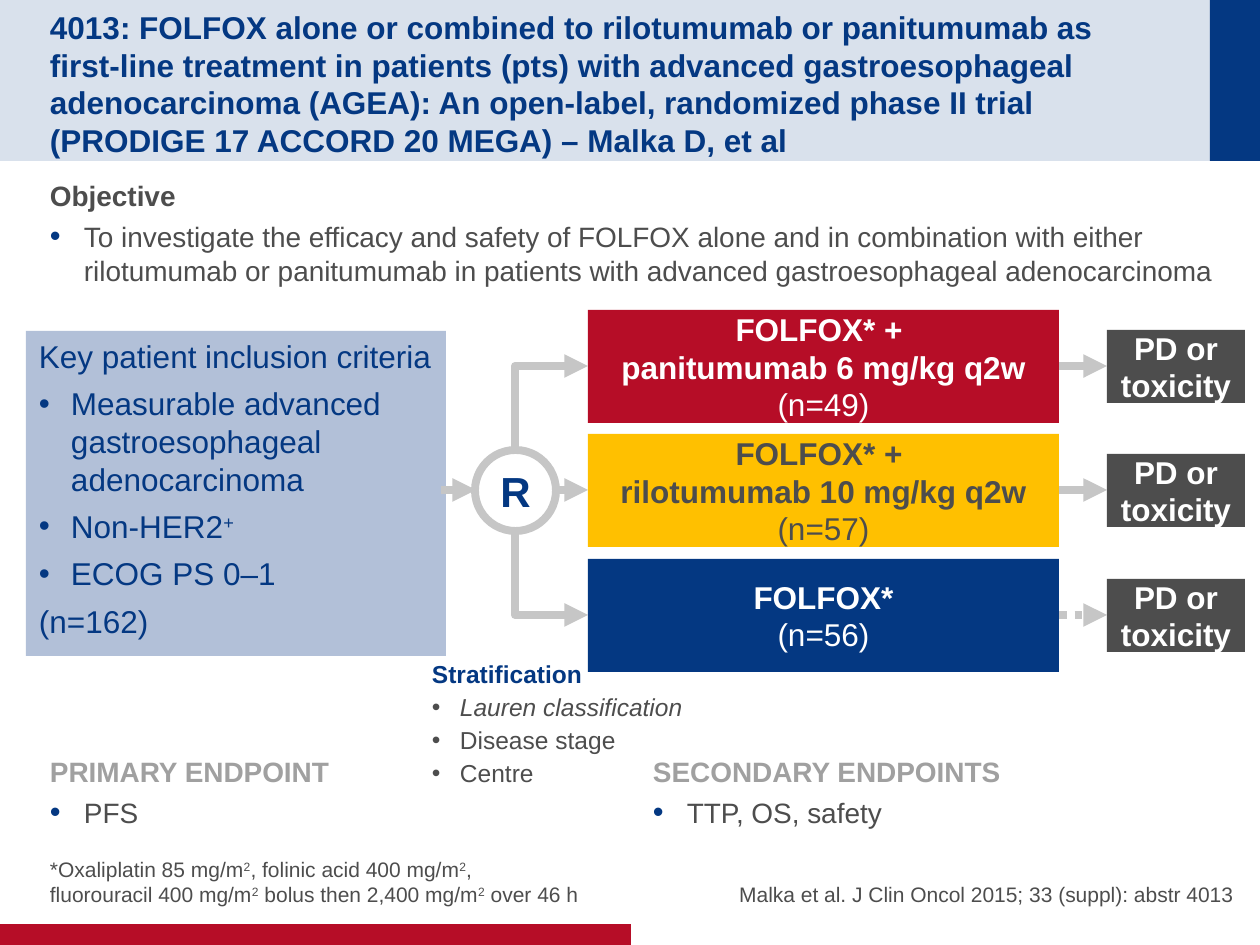
from copy import deepcopy

from lxml import etree
from pptx import Presentation
from pptx.dml.color import RGBColor
from pptx.enum.dml import MSO_LINE
from pptx.enum.shapes import MSO_CONNECTOR, MSO_SHAPE
from pptx.enum.text import MSO_ANCHOR, PP_ALIGN
from pptx.oxml.ns import qn
from pptx.util import Pt

PX = 914400 / 126
STRAIGHT, ELBOW = MSO_CONNECTOR.STRAIGHT, MSO_CONNECTOR.ELBOW
RECT, OVAL = MSO_SHAPE.RECTANGLE, MSO_SHAPE.OVAL
TOP, MIDDLE, BOTTOM = MSO_ANCHOR.TOP, MSO_ANCHOR.MIDDLE, MSO_ANCHOR.BOTTOM
LEFT, CENTER, RIGHT = PP_ALIGN.LEFT, PP_ALIGN.CENTER, PP_ALIGN.RIGHT

COLORS = {
    "navy": "043882", "red": "B60D27", "yellow": "FFC000", "pale": "D9E1EC",
    "panel": "B2C0D8", "dark": "4D4D4D", "heading": "A0A0A0",
    "arrow": "C6C6C6", "white": "FFFFFF",
}

# Text between carets is superscript.
TITLE = ("4013: FOLFOX alone or combined to rilotumumab or panitumumab as \n"
         "first-line treatment in patients (pts) with advanced gastroesophageal "
         "adenocarcinoma (AGEA): An open-label, randomized phase II trial "
         "(PRODIGE 17 ACCORD 20 MEGA) – Malka D, et al")
OBJECTIVE = ("To investigate the efficacy and safety of FOLFOX alone and in "
             "combination with either rilotumumab or panitumumab in patients "
             "with advanced gastroesophageal adenocarcinoma")
FOOTNOTE = ("*Oxaliplatin 85 mg/m^2^, folinic acid 400 mg/m^2^, \n"
            "fluorouracil 400 mg/m^2^ bolus then 2,400 mg/m^2^ over 46 h")
REFERENCE = "Malka et al. J Clin Oncol 2015; 33 (suppl): abstr 4013 "
CRITERIA_TITLE = "Key patient inclusion criteria"
CRITERIA = ["Measurable advanced gastroesophageal adenocarcinoma",
            "Non-HER2^+^", "ECOG PS 0–1"]
PATIENTS = "(n=162)"
STRATA = [("Lauren classification", True), ("Disease stage", False),
          ("Centre", False)]
# heading, heading colour, item, left, top, width, height, side inset
SECTIONS = [
    ("Objective", "dark", OBJECTIVE, 50, 173, 1172, 130, 0),
    ("PRIMARY ENDPOINT", "heading", "PFS", 50, 749, 570, 113, 0),
    ("SECONDARY ENDPOINTS", "heading", "TTP, OS, safety", 640, 749, 570, 113, 13),
]
# treatment, size, fill, text colour, centre line, dashed outcome arrow
ARMS = [
    ("FOLFOX* + \npanitumumab 6 mg/kg q2w", "(n=49)", "red", "white", 366, False),
    ("FOLFOX* + \nrilotumumab 10 mg/kg q2w", "(n=57)", "yellow", "dark", 490, False),
    ("FOLFOX*", "(n=56)", "navy", "white", 615, True),
]
OUTCOME = "PD or toxicity"
BANDS = [("pale", 0, 0, 1260, 161), ("navy", 1210, 0, 50, 161),
         ("red", 0, 924, 631, 21)]

ARM_LEFT, ARM_WIDTH, ARM_HEIGHT = 588, 471, 113
OUTCOME_LEFT, OUTCOME_WIDTH, OUTCOME_HEIGHT = 1107, 138, 73
CIRCLE_LEFT, CIRCLE_SIZE = 475, 81


def px(*values):
    return [round(value * PX) for value in values]


def rgb(name):
    return RGBColor.from_string(COLORS[name])


def line(text, size, color, bold=False, italic=False, after=0, indent=0,
         bullet_color=None, align=LEFT):
    """Describe one paragraph; a nonzero indent gives it a bullet."""
    return dict(text=text, size=size, color=color, bold=bold, italic=italic,
                after=after, indent=indent, bullet_color=bullet_color, align=align)


def add_bullet(para, indent, color):
    properties = para._p.get_or_add_pPr()
    width = str(px(indent)[0])
    properties.set("marL", width)
    properties.set("indent", "-" + width)
    if color:
        holder = etree.SubElement(properties, qn("a:buClr"))
        etree.SubElement(holder, qn("a:srgbClr"), val=COLORS[color])
        etree.SubElement(properties, qn("a:buSzPct"), val="110000")
    etree.SubElement(properties, qn("a:buFont"), typeface="Arial")
    etree.SubElement(properties, qn("a:buChar"), char="•")


def fill_paragraph(para, item):
    para.alignment = item["align"]
    para.space_after = Pt(item["after"])
    if item["indent"]:
        add_bullet(para, item["indent"], item["bullet_color"])
    for number, piece in enumerate(item["text"].split("^")):
        for row, words in enumerate(piece.split("\n")):
            if row:
                para.add_line_break()
            span = para.add_run()
            span.text = words
            font = span.font
            font.name, font.size = "Arial", Pt(item["size"])
            font.bold, font.italic = item["bold"], item["italic"]
            font.color.rgb = rgb(item["color"])
            if number % 2:
                font._element.set("baseline", "30000")
    for line_break in para._p.findall(qn("a:br")):
        line_break.insert(0, deepcopy(para.runs[0].font._element))


def set_text(box, items, anchor=TOP, insets=(13, 6, 13, 6), wrap=True):
    frame = box.text_frame
    frame.word_wrap = wrap
    frame.vertical_anchor = anchor
    (frame.margin_left, frame.margin_top,
     frame.margin_right, frame.margin_bottom) = px(*insets)
    for number, item in enumerate(items):
        para = frame.add_paragraph() if number else frame.paragraphs[0]
        fill_paragraph(para, item)


def add_text(page, place, items, **options):
    set_text(page.shapes.add_textbox(*px(*place)), items, **options)


def add_block(page, place, fill, kind=RECT):
    block = page.shapes.add_shape(kind, *px(*place))
    block.shadow.inherit = False
    block.line.fill.background()
    if fill:
        block.fill.solid()
        block.fill.fore_color.rgb = rgb(fill)
    else:
        block.fill.background()
    return block


def add_arrow(page, start, end, kind=STRAIGHT, arrow_end="a:tailEnd", dashed=False):
    arrow = page.shapes.add_connector(kind, *px(*start, *end))
    arrow.line.color.rgb = rgb("arrow")
    arrow.line.width = Pt(4.5)
    if dashed:
        arrow.line.dash_style = MSO_LINE.ROUND_DOT
        arrow.line._ln.find(qn("a:prstDash")).set("val", "sysDot")
    etree.SubElement(arrow.line._ln, qn(arrow_end), type="triangle")
    properties = arrow._element.spPr
    etree.SubElement(properties, qn("a:effectLst"))
    if kind == ELBOW:
        properties.find(qn("a:prstGeom")).set("prst", "bentConnector2")


def add_trial_design(page):
    middle = ARMS[1][4]
    circle_top = middle - CIRCLE_SIZE // 2
    circle_middle = CIRCLE_LEFT + CIRCLE_SIZE // 2

    panel = add_block(page, (26, 331, 420, 325), "panel")
    style = dict(size=18, color="navy", after=5.4)
    set_text(panel, [line(CRITERIA_TITLE, **style),
                     *[line(text, indent=32, **style) for text in CRITERIA],
                     line(PATIENTS, **style)])

    circle = add_block(page, (CIRCLE_LEFT, circle_top, CIRCLE_SIZE, CIRCLE_SIZE),
                       None, OVAL)
    circle.line.color.rgb = rgb("arrow")
    circle.line.width = Pt(4.5)
    set_text(circle, [line("R", 24, "navy", bold=True, align=CENTER)],
             anchor=MIDDLE, wrap=False)
    add_arrow(page, (441, middle), (CIRCLE_LEFT + 1, middle))
    add_arrow(page, (CIRCLE_LEFT + CIRCLE_SIZE, middle), (ARM_LEFT, middle))
    # Elbows run from the arm back to the circle, so the arrowhead is at the start.
    for center, edge in ((ARMS[0][4], circle_top),
                         (ARMS[2][4], circle_top + CIRCLE_SIZE)):
        add_arrow(page, (ARM_LEFT, center), (circle_middle, edge), ELBOW, "a:headEnd")

    for treatment, size, fill, color, center, dashed in ARMS:
        add_arrow(page, (1043, center), (OUTCOME_LEFT, center), dashed=dashed)
        arm = add_block(page, (ARM_LEFT, center - ARM_HEIGHT // 2,
                               ARM_WIDTH, ARM_HEIGHT), fill)
        set_text(arm, [line(treatment, 18, color, bold=True, align=CENTER),
                       line(size, 18, color, align=CENTER)],
                 anchor=MIDDLE, insets=(13, 0, 13, 0))
        outcome = add_block(page, (OUTCOME_LEFT, center - OUTCOME_HEIGHT // 2,
                                   OUTCOME_WIDTH, OUTCOME_HEIGHT), "dark")
        set_text(outcome, [line(OUTCOME, 18, "white", bold=True, align=CENTER)],
                 anchor=MIDDLE, insets=(13, 0, 13, 0))


def main():
    deck = Presentation()
    deck.slide_width, deck.slide_height = px(1260, 945)
    page = deck.slides.add_slide(deck.slide_layouts[6])

    for fill, *place in BANDS:
        add_block(page, place, fill)
    add_text(page, (50, 25, 1135, 111), [line(TITLE, 18, "navy", bold=True)],
             anchor=MIDDLE, insets=(0, 6, 0, 0))
    for heading, color, item, left, top, width, height, side in SECTIONS:
        add_text(page, (left, top, width, height),
                 [line(heading, 16, color, bold=True, after=4),
                  line(item, 16, "dark", after=4, indent=34, bullet_color="navy")],
                 insets=(side, 6, side, 6))
    add_trial_design(page)
    add_text(page, (419, 653, 388, 123),
             [line("Stratification", 14, "navy", bold=True, after=2),
              *[line(text, 14, "dark", italic=italic, after=2, indent=28)
                for text, italic in STRATA]])
    add_text(page, (50, 840, 619, 67), [line(FOOTNOTE, 12, "dark")],
             anchor=BOTTOM, insets=(0, 0, 0, 0))
    add_text(page, (670, 840, 570, 67), [line(REFERENCE, 12, "dark", align=RIGHT)],
             anchor=BOTTOM, insets=(0, 0, 0, 0))
    deck.save("out.pptx")


if __name__ == "__main__":
    main()
